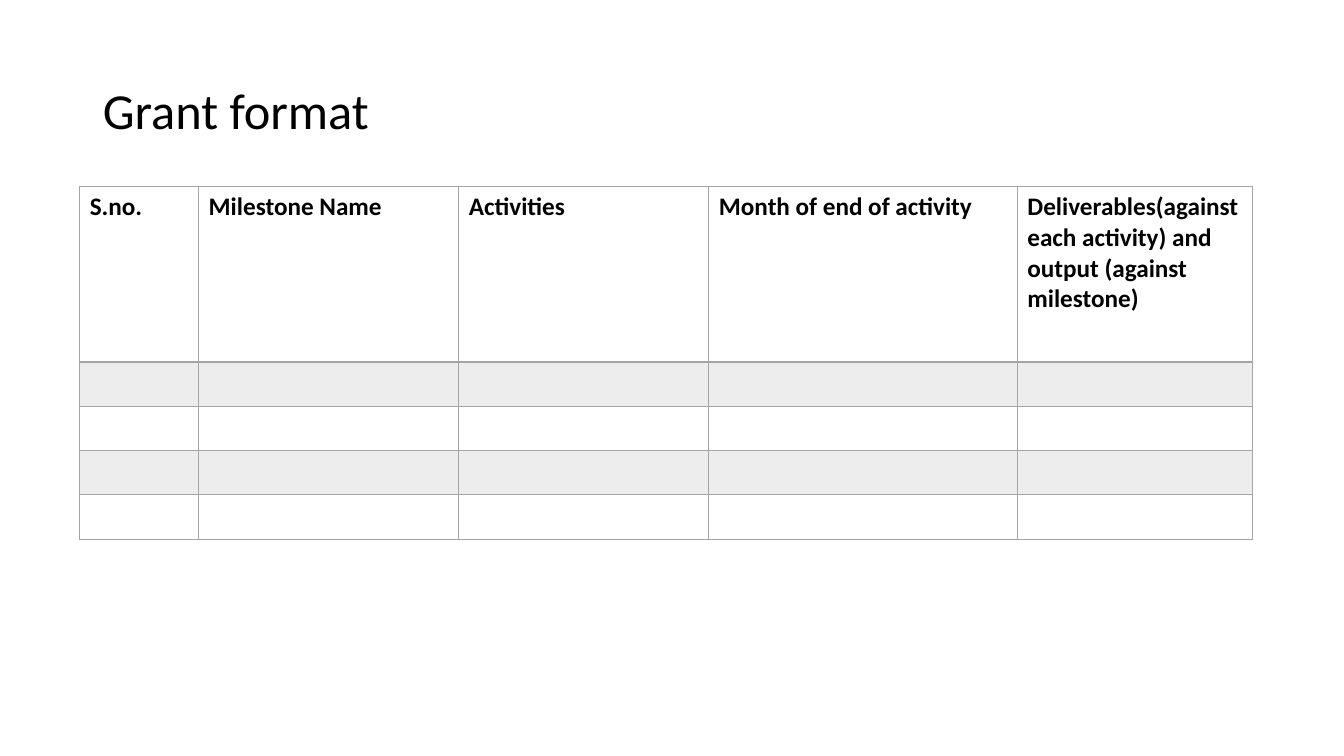
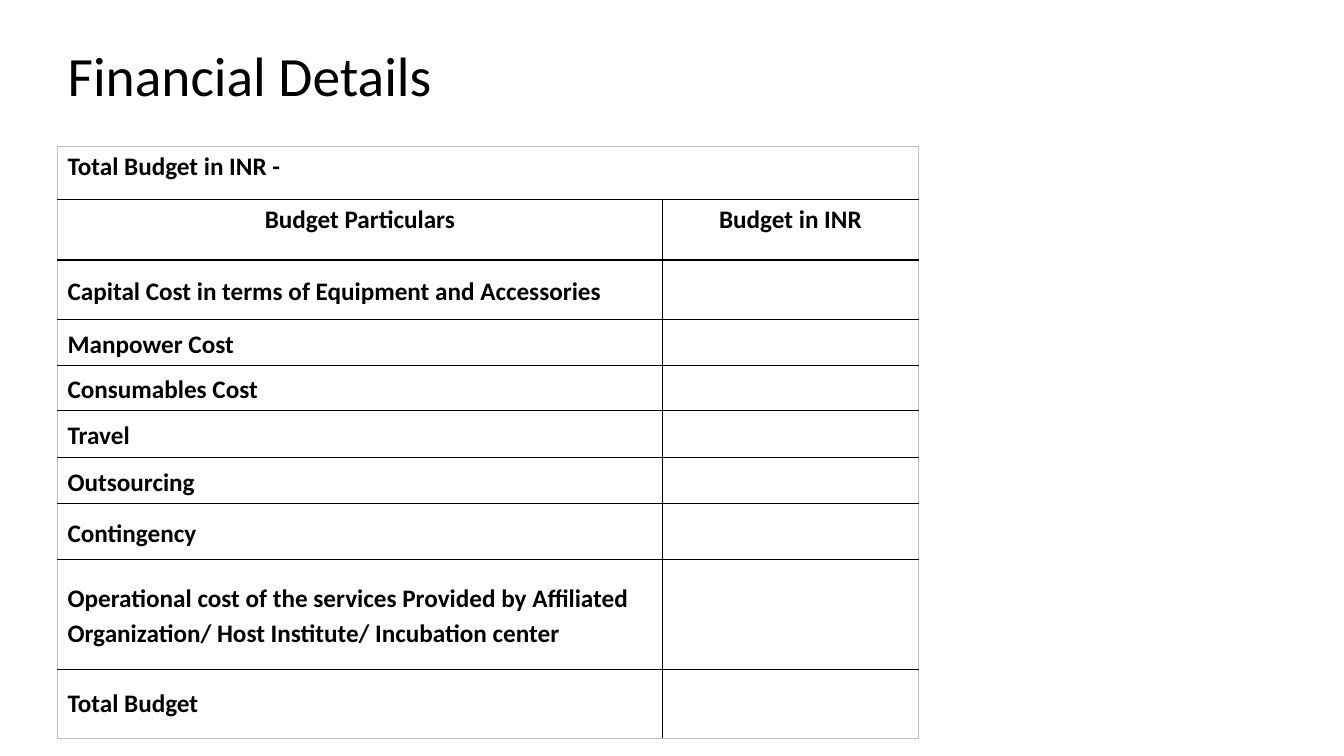
from dataclasses import dataclass

import pptx
import pptx.dml.color
import pptx.enum.text
import pptx.oxml.ns
import pptx.util
from lxml import etree

PX = 9144
FONT = "Calibri"
COLORS = {"text": "000000", "rule": "000000", "grey": "A5A5A5", "band": "EDEDED", "edge": "BFBFBF"}
ALIGN = pptx.enum.text.PP_ALIGN
ANCHOR = pptx.enum.text.MSO_ANCHOR


def px(n: int) -> pptx.util.Emu:
    return pptx.util.Emu(n * PX)


def rgb(name: str) -> pptx.dml.color.RGBColor:
    return pptx.dml.color.RGBColor.from_string(COLORS[name])


@dataclass(frozen=True)
class Box:
    x: int
    y: int
    w: int
    h: int


@dataclass(frozen=True)
class Entry:
    text: str = ""
    align: ALIGN = ALIGN.LEFT
    spacing: float = 1.0
    span: int = 1
    middle: bool = False
    inset: int | None = None
    indent: int = 0


@dataclass(frozen=True)
class Grid:
    x: int
    y: int
    cols: list[int]
    heights: list[int]
    rows: list[list[Entry]]
    inner: str
    outer: str
    header_rule: int = 1
    banded: bool = False


def set_font(p, size: float, bold: bool = False) -> None:
    p.font.name = FONT
    p.font.size = pptx.util.Pt(size)
    p.font.bold = bold
    p.font.color.rgb = rgb("text")


def add_titled_slide(prs, title: str, box: Box, size: float):
    s = prs.slides.add_slide(prs.slide_layouts[5])
    sp = s.shapes.title
    sp.left, sp.top, sp.width, sp.height = map(px, (box.x, box.y, box.w, box.h))
    tf = sp.text_frame
    tf.text = title
    tf.word_wrap = True
    tf.auto_size = pptx.enum.text.MSO_AUTO_SIZE.NONE
    tf.vertical_anchor = ANCHOR.MIDDLE
    p = tf.paragraphs[0]
    p.alignment = ALIGN.LEFT
    p.line_spacing = 0.9
    set_font(p, size)
    return s


def set_border(cell, side: str, color: str, width: int) -> None:
    qn = pptx.oxml.ns.qn
    ln = etree.SubElement(cell._tc.get_or_add_tcPr(), qn(f"a:ln{side}"), w=str(pptx.util.Pt(width)))
    fill = etree.SubElement(ln, qn("a:solidFill"))
    etree.SubElement(fill, qn("a:srgbClr"), val=COLORS[color])


def set_borders(cell, grid: Grid, row: int, col: int) -> None:
    last_row, last_col = len(grid.heights) - 1, len(grid.cols) - 1
    merged = cell.is_merge_origin or cell.is_spanned
    edges = {
        "L": col == 0 or merged,
        "R": col == last_col or merged,
        "T": row == 0,
        "B": row == last_row,
    }
    for side, is_outer in edges.items():
        under_header = (row, side) in ((0, "B"), (1, "T"))
        width = grid.header_rule if under_header else 1
        set_border(cell, side, grid.outer if is_outer else grid.inner, width)


def write_entry(cell, entry: Entry) -> None:
    if entry.middle:
        cell.vertical_anchor = ANCHOR.MIDDLE
    if entry.inset is not None:
        cell.margin_left = cell.margin_right = px(entry.inset)
        cell.margin_top = cell.margin_bottom = px(entry.inset)
    p = cell.text_frame.paragraphs[0]
    if entry.text:
        p.add_run().text = entry.text
    p.alignment = entry.align
    p.line_spacing = entry.spacing
    if entry.indent:
        p._p.get_or_add_pPr().set("marL", str(px(entry.indent)))
    set_font(p, 18, bold=True)


def add_grid(s, grid: Grid) -> None:
    frame = s.shapes.add_table(
        len(grid.heights), len(grid.cols),
        px(grid.x), px(grid.y), px(sum(grid.cols)), px(sum(grid.heights)),
    )
    table = frame.table
    table.first_row = table.horz_banding = False
    for column, width in zip(table.columns, grid.cols):
        column.width = px(width)
    for row, height in zip(table.rows, grid.heights):
        row.height = px(height)
    for r, entries in enumerate(grid.rows):
        for c, entry in enumerate(entries):
            cell = table.cell(r, c)
            if entry.span > 1:
                cell.merge(table.cell(r, c + entry.span - 1))
            write_entry(cell, entry)
    for r in range(len(grid.heights)):
        for c in range(len(grid.cols)):
            cell = table.cell(r, c)
            set_borders(cell, grid, r, c)
            if grid.banded and r % 2:
                cell.fill.solid()
                cell.fill.fore_color.rgb = rgb("band")
            else:
                cell.fill.background()


def particular(text: str, spacing: float = 1.15) -> list[Entry]:
    return [Entry(text, spacing=spacing, middle=True, inset=1, indent=9), Entry()]


MILESTONE_HEADS = [
    "S.no.",
    "Milestone Name",
    "Activities",
    "Month of end of activity",
    "Deliverables(against each activity) and output (against milestone)",
]
COSTS = [
    "Capital Cost in terms of Equipment and Accessories",
    "Manpower Cost",
    "Consumables Cost",
    "Travel",
    "Outsourcing",
    "Contingency",
    "Operational cost of the services Provided by Affiliated Organization/ Host Institute/ Incubation center",
]
MILESTONES = Grid(
    x=79, y=185,
    cols=[118, 258, 248, 306, 233],
    heights=[174] + [44] * 4,
    rows=[[Entry(head) for head in MILESTONE_HEADS]] + [[Entry()] * 5] * 4,
    inner="grey", outer="grey", header_rule=2, banded=True,
)
BUDGET = Grid(
    x=57, y=145,
    cols=[600, 254],
    heights=[53, 60, 59, 46, 44, 47, 46, 55, 109, 69],
    rows=[
        [Entry("Total Budget in INR -", ALIGN.JUSTIFY, span=2)],
        [Entry(head, ALIGN.CENTER) for head in ("Budget Particulars", "Budget in INR")],
        *map(particular, COSTS),
        particular("Total Budget", spacing=1.0),
    ],
    inner="rule", outer="edge",
)


def main() -> None:
    prs = pptx.Presentation()
    prs.slide_width, prs.slide_height = px(1333), px(750)
    add_grid(add_titled_slide(prs, "Grant format", Box(92, 40, 1150, 145), 36), MILESTONES)
    add_grid(add_titled_slide(prs, "Financial Details", Box(57, 47, 900, 62), 39.6), BUDGET)
    prs.save("out.pptx")


if __name__ == "__main__":
    main()
